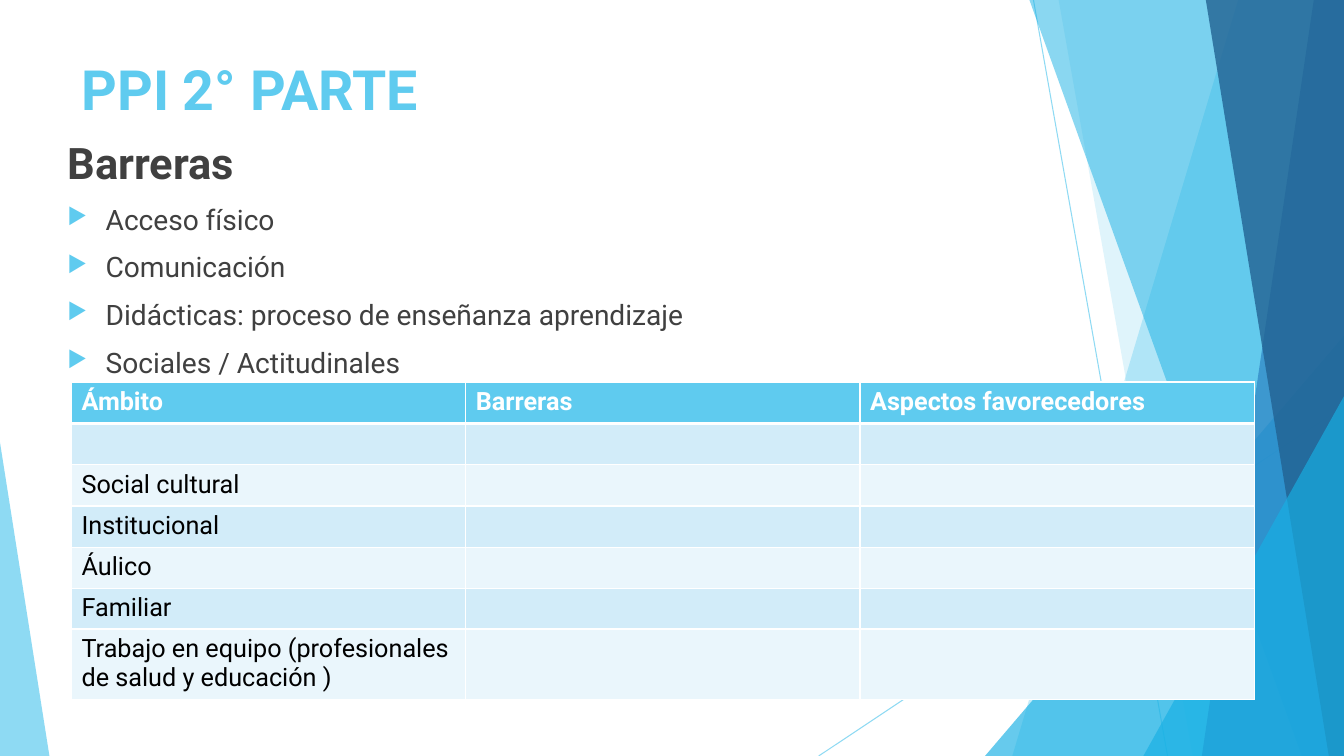
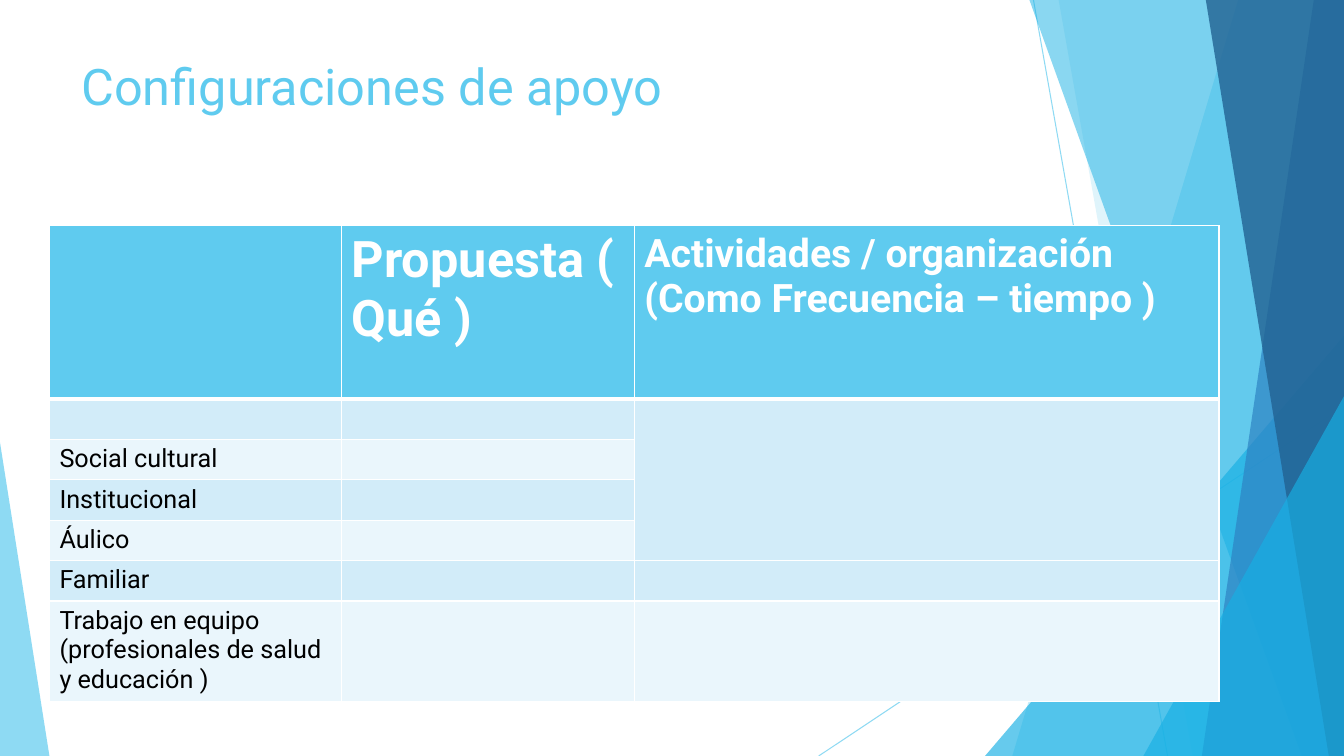
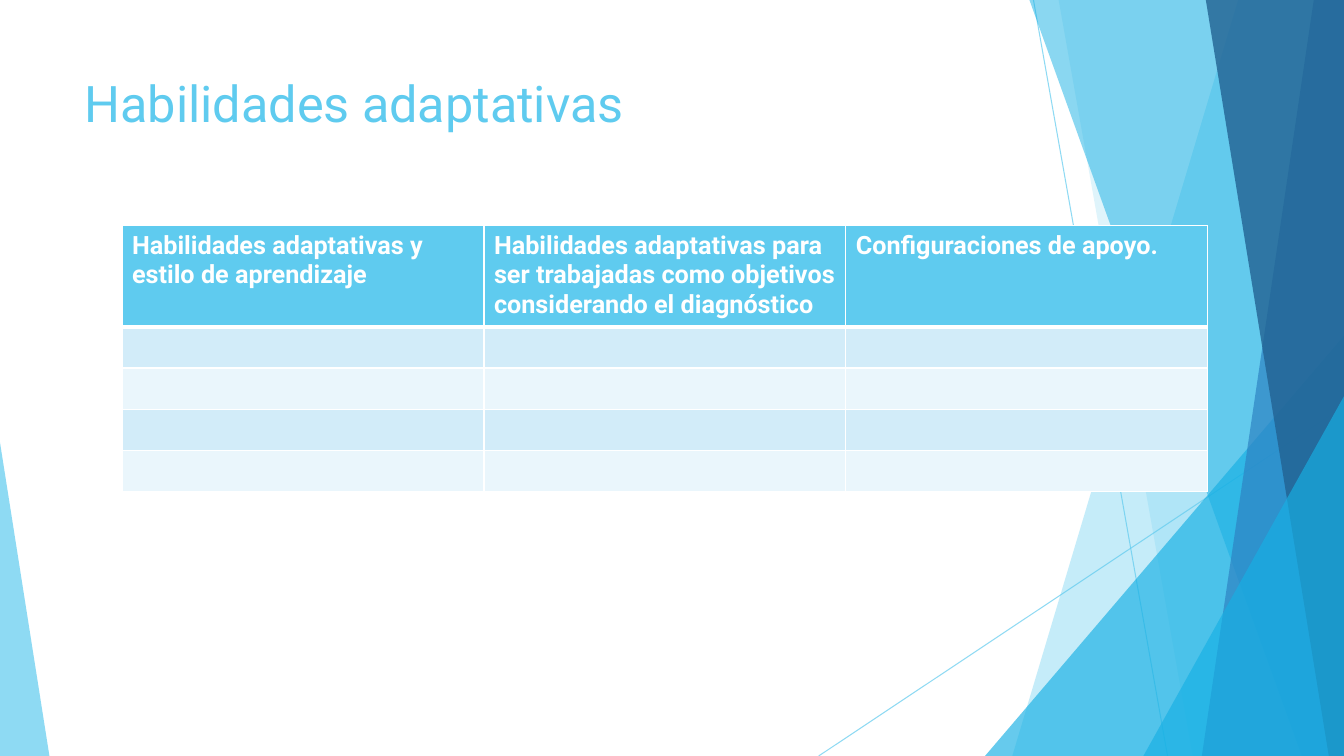
from lxml import etree
from pptx import Presentation
from pptx import util as u
from pptx.dml.color import RGBColor
from pptx.enum import shapes, text
from pptx.oxml import ns

HUES = {
    "sky": "5FCBEF", "cyan": "17B0E4", "blue": "2E83C3", "navy": "226292",
    "dark": "404040", "black": "000000", "white": "FFFFFF",
    "odd": "D2ECF9", "even": "EAF6FC",
}
FONT = "Roboto"
WIDE, HIGH = 13.33, 7.5
SCOPES = ["", "Social cultural", "Institucional", "Áulico", "Familiar",
          "Trabajo en equipo (profesionales de salud y educación )"]


class Deck:
    """Hold the shared style and the current slide."""

    def __init__(self):
        self.file = Presentation()
        self.file.slide_width = u.Inches(WIDE)
        self.file.slide_height = u.Inches(HIGH)
        self.slide = None

    def hue(self, name):
        return RGBColor.from_string(HUES[name])

    def node(self, root, tag, **attrs):
        return etree.SubElement(root, ns.qn(tag), attrs)

    def fade(self, root, alpha):
        tint = next(root.iter(ns.qn("a:srgbClr")))
        self.node(tint, "a:alpha", val=str(alpha * 1000))

    def paint(self, shape, color, alpha):
        shape.shadow.inherit = False
        shape.fill.solid()
        shape.fill.fore_color.rgb = self.hue(color)
        shape.line.fill.background()
        self.fade(shape.fill._xPr, alpha)

    def line(self, start, end):
        ends = [u.Inches(n) for n in start + end]
        rule = self.slide.shapes.add_connector(shapes.MSO_CONNECTOR.STRAIGHT, *ends)
        rule.line.width = u.Pt(0.75)
        rule.line.color.rgb = self.hue("sky")
        props = rule._element.spPr
        self.fade(props, 70)
        self.node(props, "a:effectLst")

    def band(self, top, foot, color, alpha):
        spots = [(top, 0), (WIDE, 0), (WIDE, HIGH), (foot, HIGH)]
        spots = [(u.Inches(x), u.Inches(y)) for x, y in spots]
        form = self.slide.shapes.build_freeform(*spots[0])
        form.add_line_segments(spots[1:], close=True)
        self.paint(form.convert_to_shape(), color, alpha)

    def wedge(self, left, top, width, apex, color, alpha):
        box = [u.Inches(n) for n in (left, top, width, HIGH - top)]
        shape = self.slide.shapes.add_shape(
            shapes.MSO_SHAPE.ISOSCELES_TRIANGLE, *box)
        shape.adjustments[0] = apex
        self.paint(shape, color, alpha)

    def page(self):
        self.slide = self.file.slides.add_slide(self.file.slide_layouts[6])
        self.line((10.25, 0), (11.58, HIGH))
        self.line((WIDE, 4.03), (8.12, HIGH))
        self.band(12.28, 10.04, "sky", 36)
        self.band(10.5, 11.83, "sky", 20)
        self.wedge(9.77, 3.33, 3.56, 1, "cyan", 66)
        self.band(10.21, 12.91, "cyan", 50)
        self.band(13.03, 11.92, "blue", 70)
        self.band(11.96, 13.18, "navy", 80)
        self.wedge(11.34, 3.93, 1.99, 1, "cyan", 66)
        self.wedge(0, 4.39, 0.49, 0, "sky", 70)

    def run(self, para, words, size, color, bold=False):
        run = para.add_run()
        run.text = words
        run.font.name = FONT
        run.font.size = u.Pt(size)
        run.font.bold = bold
        run.font.color.rgb = self.hue(color)

    def frame(self, *box):
        frame = self.slide.shapes.add_textbox(*map(u.Inches, box)).text_frame
        frame.word_wrap = True
        frame.vertical_anchor = text.MSO_ANCHOR.TOP
        return frame

    def title(self, words, box, size=36, bold=False):
        frame = self.frame(*box)
        self.run(frame.paragraphs[0], words, size, "sky", bold)

    def list(self, head, items, box):
        frame = self.frame(*box)
        self.run(frame.paragraphs[0], head, 31, "dark", True)
        for item in items:
            para = frame.add_paragraph()
            para.space_before = u.Pt(10)
            props = para._p.get_or_add_pPr()
            props.set("marL", str(u.Inches(0.38)))
            props.set("indent", str(u.Inches(-0.38)))
            tint = self.node(props, "a:buClr")
            self.node(tint, "a:srgbClr", val=HUES["sky"])
            self.node(props, "a:buSzPct", val="80000")
            self.node(props, "a:buChar", char="▶")
            self.run(para, item, 20.1, "dark")

    def edge(self, cell, row):
        props = cell._tc.get_or_add_tcPr()
        thick = {"T": 3 if row == 1 else 1, "B": 3 if row == 0 else 1}
        for side in "LRTB":
            width = u.Pt(thick.get(side, 1))
            rule = self.node(props, f"a:ln{side}", w=str(width))
            fill = self.node(rule, "a:solidFill")
            self.node(fill, "a:srgbClr", val=HUES["white"])

    def table(self, left, top, cols, highs, rows, sizes=(18, 18, 18), span=None):
        box = [u.Inches(n) for n in (left, top, sum(cols), sum(highs))]
        grid = self.slide.shapes.add_table(len(highs), len(cols), *box).table
        grid.first_row = grid.horz_banding = False
        for col, width in zip(grid.columns, cols):
            col.width = u.Inches(width)
        for r, high in enumerate(highs):
            grid.rows[r].height = u.Inches(high)
            for c, size in enumerate(sizes):
                cell = grid.cell(r, c)
                self.edge(cell, r)
                cell.fill.solid()
                shade = "sky" if r == 0 else ("even", "odd")[r % 2]
                cell.fill.fore_color.rgb = self.hue(shade)
                words = rows[r][c] if c < len(rows[r]) else ""
                para = cell.text_frame.paragraphs[0]
                if words and r == 0:
                    self.run(para, words, size, "white", True)
                elif words:
                    self.run(para, words, 18, "black")
                else:
                    self.node(para._p, "a:endParaRPr", sz="1200")
        if span:
            grid.cell(*span[0]).merge(grid.cell(*span[1]))


def main():
    deck = Deck()
    scopes = [[name] for name in SCOPES]

    deck.page()
    deck.title("PPI 2° PARTE", (0.71, 0.5, 10.29, 0.81), 39.6, True)
    deck.list("Barreras", ["Acceso físico", "Comunicación",
                           "Didácticas: proceso de enseñanza aprendizaje",
                           "Sociales / Actitudinales"], (0.57, 1.3, 10.42, 2.94))
    deck.table(0.71, 3.79, [3.91] * 3, [0.41] * 5 + [0.4, 0.68],
               [["Ámbito", "Barreras", "Aspectos favorecedores"]] + scopes)

    deck.page()
    deck.title("Configuraciones de apoyo", (0.71, 0.5, 10.69, 0.97))
    deck.table(0.49, 2.24, [2.9, 2.9, 5.8], [1.72] + [0.4] * 5 + [0.98],
               [["", "Propuesta ( Qué )",
                 "Actividades / organización (Como Frecuencia – tiempo )"]] + scopes,
               (18, 36, 28), ((1, 2), (4, 2)))

    deck.page()
    deck.title("Habilidades adaptativas", (0.74, 0.67, 9.4, 1.44))
    deck.table(1.21, 2.24, [3.59] * 3, [0.98] + [0.41] * 4,
               [["Habilidades adaptativas y estilo de aprendizaje",
                 "Habilidades adaptativas para ser trabajadas como objetivos "
                 "considerando el diagnóstico",
                 "Configuraciones de apoyo."]] + [[]] * 4)

    deck.file.save("out.pptx")


if __name__ == "__main__":
    main()
